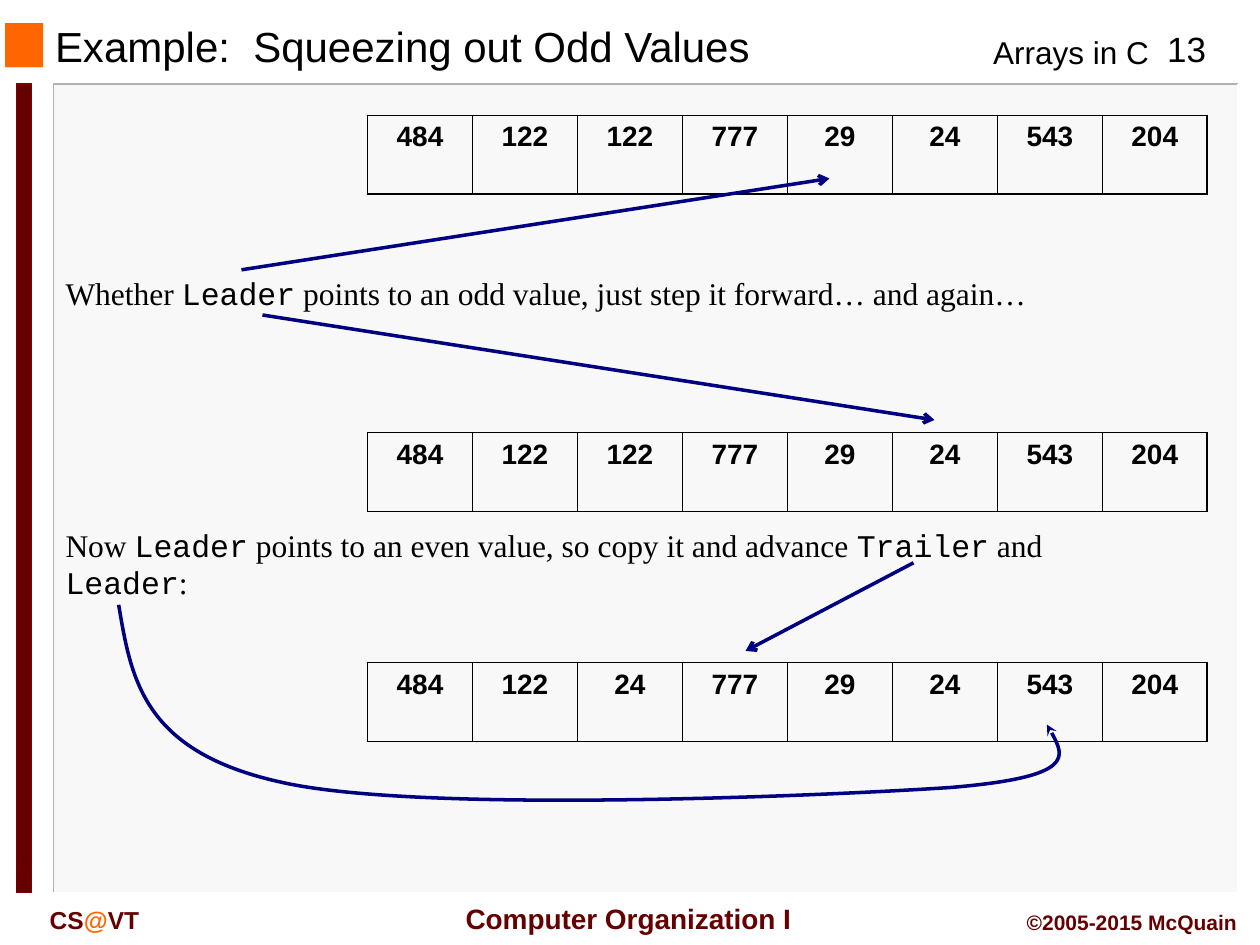
from dataclasses import dataclass

from lxml.etree import SubElement
from pptx import Presentation
from pptx.dml.color import RGBColor as Color
from pptx.enum.shapes import MSO_CONNECTOR as Connector, MSO_SHAPE as Shape
from pptx.enum.text import MSO_ANCHOR as Anchor, PP_ALIGN as Align
from pptx.oxml import parse_xml
from pptx.oxml.ns import nsdecls, qn
from pptx.util import Inches, Pt


@dataclass(frozen=True)
class Theme:
    panel: str = "F8F8F8"
    panel_shade: str = "B2B2B2"
    white: str = "FFFFFF"
    orange: str = "FF6600"
    maroon: str = "660000"
    maroon_edge: str = "800000"
    ink: str = "000000"
    arrow: str = "000080"
    sans: str = "Arial"
    serif: str = "Times New Roman"
    code: str = "Courier New"
    title: int = 24
    number: int = 20
    body: int = 18
    cell: int = 16
    mark: int = 14
    credit: int = 12
    arrow_width: int = 2


THEME = Theme()
UNITS_PER_INCH = 12
TABLE_LEFT, CELL_WIDTH, CELL_HEIGHT = 35, 10, 7.5
TIGHT = (0.02, 0.03)
LOOSE = (0.1, 0.05)


def grid(units):
    return Inches(units / UNITS_PER_INCH)


def paint(target, color):
    target.solid()
    target.fore_color.rgb = Color.from_string(color)


def style_shape(shape, fill=None, line=None, width=1):
    shape.shadow.inherit = False
    if fill:
        paint(shape.fill, fill)
    else:
        shape.fill.background()
    if line:
        paint(shape.line.fill, line)
        shape.line.width = Pt(width)
    else:
        shape.line.fill.background()


def add_outline(shapes, points, **style):
    first, *rest = [(grid(x), grid(y)) for x, y in points]
    builder = shapes.build_freeform(*first, scale=1.0)
    builder.add_line_segments(rest, close=False)
    shape = builder.convert_to_shape()
    style_shape(shape, **style)
    return shape


def add_bevel(slide, box, fill, upper, lower, edge_fill=None):
    left, top, width, height = box
    right, bottom = left + width, top + height
    group = slide.shapes.add_group_shape()
    face = group.shapes.add_shape(Shape.RECTANGLE, *map(grid, box))
    style_shape(face, fill=fill)
    corners = (right, top), (left, bottom)
    for middle, line in (((left, top), upper), ((right, bottom), lower)):
        add_outline(group.shapes, (corners[0], middle, corners[1]),
                    fill=edge_fill, line=line)


def add_text(slide, box, runs, size, align=Align.LEFT, inset=LOOSE,
             font=THEME.sans, color=THEME.ink, bold=False,
             anchor=Anchor.TOP, wrap=True):
    frame = slide.shapes.add_textbox(*map(grid, box)).text_frame
    frame.word_wrap = wrap
    frame.vertical_anchor = anchor
    frame.margin_left = frame.margin_right = Inches(inset[0])
    frame.margin_top = frame.margin_bottom = Inches(inset[1])
    paragraph = frame.paragraphs[0]
    paragraph.alignment = align
    paragraph.font.size = Pt(size)
    paragraph.font.bold = bold
    for text, run_font, run_color in runs:
        run = paragraph.add_run()
        run.text = text
        run.font.name = run_font or font
        run.font.color.rgb = Color.from_string(run_color or color)
    return paragraph


def plain(text):
    return [(text, None, None)]


def add_sentence(slide, top, height, *pieces):
    runs = [(text, THEME.code if index % 2 else THEME.serif, None)
            for index, text in enumerate(pieces)]
    add_text(slide, (6, top, 100, height), runs, THEME.body, inset=TIGHT)


def add_cell_borders(cell):
    properties = cell._tc.get_or_add_tcPr()
    for index, side in enumerate("LRTB"):
        properties.insert(index, parse_xml(
            f'<a:ln{side} {nsdecls("a")} w="{Pt(1)}"><a:solidFill>'
            f'<a:srgbClr val="{THEME.ink}"/></a:solidFill></a:ln{side}>'))


def add_array(slide, top, values):
    size = CELL_WIDTH * len(values), CELL_HEIGHT
    table = slide.shapes.add_table(
        1, len(values), *map(grid, (TABLE_LEFT, top, *size))).table
    table.first_row = table.horz_banding = False
    for column, value in enumerate(values):
        table.columns[column].width = grid(CELL_WIDTH)
        cell = table.cell(0, column)
        cell.text = str(value)
        cell.fill.background()
        add_cell_borders(cell)
        paragraph = cell.text_frame.paragraphs[0]
        paragraph.alignment = Align.CENTER
        paragraph.font.name = THEME.sans
        paragraph.font.size = Pt(THEME.cell)
        paragraph.font.bold = True
        paragraph.font.color.rgb = Color.from_string(THEME.ink)


def add_arrowhead(shape, kind):
    SubElement(shape.line._get_or_add_ln(), qn("a:tailEnd"), type=kind)


def add_arrow(slide, start, end):
    arrow = slide.shapes.add_connector(
        Connector.STRAIGHT, *map(grid, (*start, *end)))
    paint(arrow.line.fill, THEME.arrow)
    arrow.line.width = Pt(THEME.arrow_width)
    add_arrowhead(arrow, "arrow")
    SubElement(arrow._element.spPr, qn("a:effectLst"))


def add_curved_arrow(slide, points, width, height):
    arrow = add_outline(slide.shapes, points, line=THEME.arrow,
                        width=THEME.arrow_width)
    add_arrowhead(arrow, "stealth")
    outline = arrow._element.find(".//" + qn("a:path"))
    segments = outline.findall(qn("a:lnTo"))
    for index in range(0, len(segments), 3):
        curve = SubElement(outline, qn("a:cubicBezTo"))
        for segment in segments[index:index + 3]:
            curve.append(segment[0])
            outline.remove(segment)
    arrow.width, arrow.height = grid(width), grid(height)
    outline.set("w", str(arrow.width))
    outline.set("h", str(arrow.height))


def add_frame(slide):
    add_bevel(slide, (5.1, 8, 112.8, 77), THEME.panel,
              THEME.panel_shade, THEME.white)
    add_bevel(slide, (0.5, 2.2, 3.6, 4.2), THEME.orange, None, None,
              edge_fill=THEME.orange)
    add_bevel(slide, (1.56, 8, 1.44, 77), THEME.maroon,
              THEME.maroon_edge, THEME.maroon_edge, edge_fill=THEME.maroon)
    add_text(slide, (93.4, 2.6, 18.1, 4.8), plain("Arrays in C"), THEME.body)
    add_text(slide, (109, 2, 8, 5.3), plain("13"), THEME.number, Align.CENTER)
    footer = dict(color=THEME.maroon, bold=True)
    add_text(slide, (42.4, 85.3, 34.9, 4.4), plain("Computer Organization I"),
             THEME.cell, Align.CENTER, anchor=Anchor.MIDDLE, wrap=False,
             **footer)
    add_text(slide, (0, 85.6, 18, 4),
             [("CS", None, None), ("@", None, THEME.orange),
              ("VT", None, None)], THEME.mark, Align.CENTER, **footer)
    add_text(slide, (94, 86, 25, 3.6), plain("©2005-2015 McQuain"),
             THEME.credit, Align.RIGHT, **footer)


def main():
    presentation = Presentation()
    presentation.slide_width, presentation.slide_height = Inches(10), Inches(7.5)
    slide = presentation.slides.add_slide(presentation.slide_layouts[6])
    add_frame(slide)
    title = add_text(slide, (5, 1.3, 87, 6.2),
                     plain("Example:  Squeezing out Odd Values"), THEME.title,
                     inset=TIGHT, anchor=Anchor.MIDDLE, wrap=False)
    title.line_spacing = Pt(28)

    before = [484, 122, 122, 777, 29, 24, 543, 204]
    after = before[:2] + [24] + before[3:]
    for top, values in ((11, before), (41.2, before), (63.1, after)):
        add_array(slide, top, values)
    add_sentence(slide, 25.7, 4.3, "Whether ", "Leader",
                 " points to an odd value, just step it forward… and again…")
    add_sentence(slide, 49.7, 7.9, "Now ", "Leader",
                 " points to an even value, so copy it and advance ",
                 "Trailer", " and ", "Leader", ":")
    for start, end in (((23, 25.7), (79, 17)), ((25, 30), (89, 40)),
                       ((87, 53.6), (71, 62))):
        add_arrow(slide, start, end)
    add_curved_arrow(slide, [
        (11.3, 57.6), (12.5, 64.7), (13.6, 71.6), (26.8, 74.5),
        (40, 77.5), (78.4, 75.8), (90.5, 75),
        (102.6, 74), (101.2, 71.5), (99.7, 69)], 89.4, 18.6)
    presentation.save("out.pptx")


if __name__ == "__main__":
    main()
